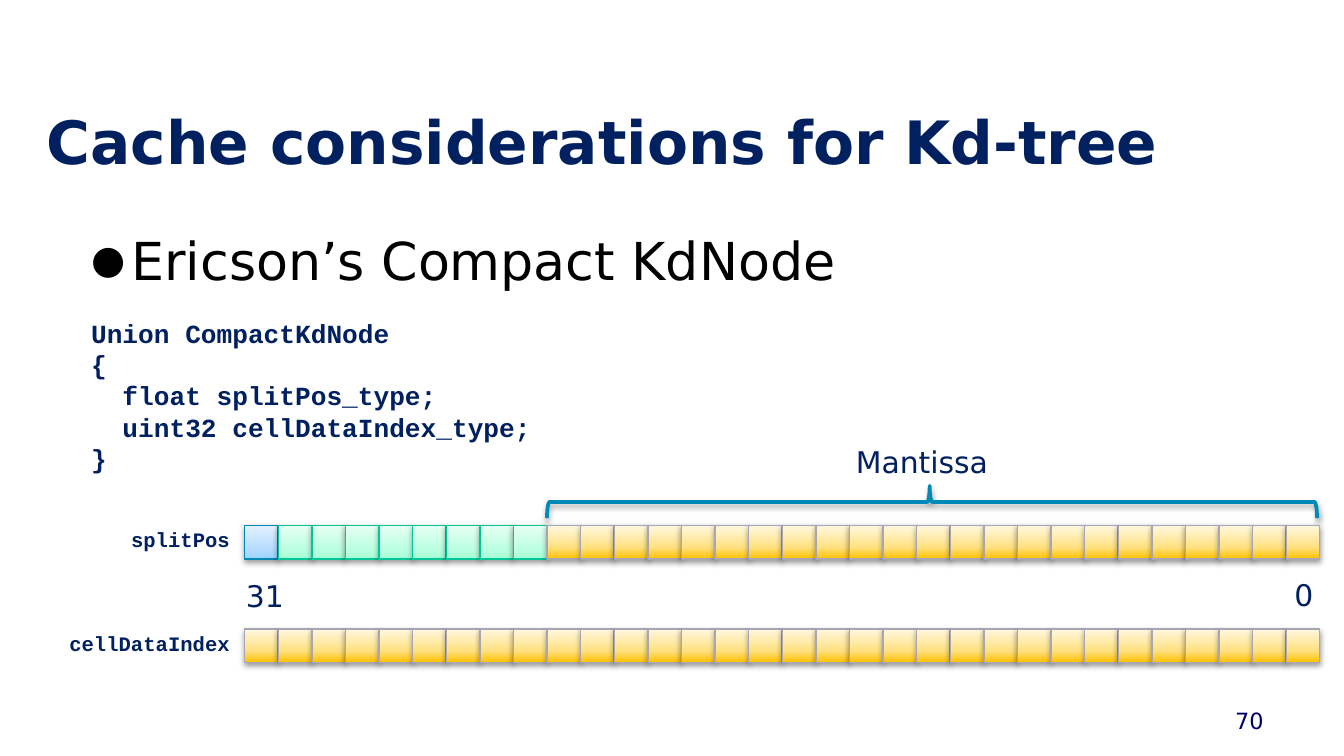
from copy import deepcopy
from dataclasses import dataclass
from typing import NamedTuple

from lxml.etree import SubElement
from pptx import Presentation
from pptx.dml.color import RGBColor
from pptx.enum.shapes import MSO_SHAPE as Preset
from pptx.enum.text import MSO_ANCHOR as Anchor, PP_ALIGN as Align
from pptx.oxml.ns import qn
from pptx.util import Inches, Pt

COLUMNS, ROWS, UNIT = 40, 22.5, 0.25


@dataclass(frozen=True)
class Theme:
    """Colours, fonts and type sizes of the slide."""
    sans: str = "DejaVu Sans"
    mono: str = "Courier New"
    navy: str = "002060"
    black: str = "000000"
    number: str = "000066"
    brace: str = "008AB9"
    title_size: int = 32
    body_size: int = 28
    note_size: int = 16
    code_size: int = 14
    number_size: int = 12
    label_size: int = 11
    sign: tuple = ("0087B5", "9DD2FF", "BADEFF", "E5F2FF")
    exponent: tuple = ("00C896", "A5FFD6", "BFFFE2", "E7FFF3")
    mantissa: tuple = ("A6A6B4", "FFC000", "FFE181", "FFF8E1")
    stops: tuple = (0, 0.35, 1)


THEME = Theme()


class Box(NamedTuple):
    """A region measured in grid columns and rows."""
    left: float
    top: float
    width: float
    height: float

    def area(self, column, row, width, height):
        """Return a region offset from this one's top left corner."""
        return Box(self.left + column, self.top + row, width, height)

    def frame(self):
        """Return left, top, width and height as slide lengths."""
        return [Inches(length * UNIT) for length in self]


def add_text(slide, box, text, *, size, font=THEME.sans, color=THEME.navy, bold=False,
             align=Align.LEFT, anchor=Anchor.TOP, wrap=True, bullet=None):
    """Add a text box with one paragraph for each line of text."""
    frame = slide.shapes.add_textbox(*box.frame()).text_frame
    frame.word_wrap, frame.vertical_anchor = wrap, anchor
    frame.text = text
    for paragraph in frame.paragraphs:
        if bullet:
            add_bullet(paragraph, bullet)
        paragraph.alignment = align
        style = paragraph.font
        style.name, style.size, style.bold = font, Pt(size), bold
        style.color.rgb = RGBColor.from_string(color)


def add_bullet(paragraph, character):
    """Give a paragraph a hanging bullet at three quarters of the text size."""
    properties = paragraph._p.get_or_add_pPr()
    properties.set("marL", str(Inches(0.3)))
    properties.set("indent", str(-Inches(0.3)))
    color = SubElement(properties, qn("a:buClr"))
    SubElement(color, qn("a:srgbClr"), val=THEME.black)
    SubElement(properties, qn("a:buSzPct"), val="75000")
    SubElement(properties, qn("a:buFont"), typeface=THEME.sans)
    SubElement(properties, qn("a:buChar"), char=character)


def add_shadow(shape):
    """Put a soft shadow just below a shape."""
    shape.shadow.inherit = False
    effects = shape._element.spPr.find(qn("a:effectLst"))
    shadow = SubElement(effects, qn("a:outerShdw"), blurRad=str(Pt(3.1)), dist=str(Pt(1.6)),
                        dir="5400000", rotWithShape="0")
    color = SubElement(shadow, qn("a:srgbClr"), val=THEME.black)
    SubElement(color, qn("a:alpha"), val="38000")


def add_bit(slide, box, palette):
    """Draw one bit cell, its gradient rising from the bottom."""
    outline, *shades = palette
    bit = slide.shapes.add_shape(Preset.RECTANGLE, *box.frame())
    fill = bit.fill
    fill.gradient()
    fill.gradient_angle = 90
    stop_list = bit._element.spPr.find(qn("a:gradFill")).find(qn("a:gsLst"))
    stop_list.append(deepcopy(stop_list[-1]))
    for stop, position, shade in zip(fill.gradient_stops, THEME.stops, shades):
        stop.position = position
        stop.color.rgb = RGBColor.from_string(shade)
    bit.line.color.rgb = RGBColor.from_string(outline)
    bit.line.width = Pt(0.75)
    add_shadow(bit)


def add_register(slide, box, label, label_width, fields):
    """Draw a labelled row of bits from fields of (count, palette)."""
    add_text(slide, box.area(-0.04 - label_width, -0.14, label_width, 1.16), label,
             size=THEME.label_size, font=THEME.mono, bold=True, align=Align.RIGHT)
    palettes = [palette for count, palette in fields for _ in range(count)]
    pitch = box.width / len(palettes)
    for index, palette in enumerate(palettes):
        add_bit(slide, box.area(index * pitch, 0, pitch, box.height), palette)


def add_brace(slide, box):
    """Draw a brace over the box, pointing up."""
    upright = box.area((box.width - box.height) / 2, (box.height - box.width) / 2,
                       box.height, box.width)
    brace = slide.shapes.add_shape(Preset.RIGHT_BRACE, *upright.frame())
    brace.rotation = 270
    brace.adjustments[0], brace.adjustments[1] = 0.083, 0.497
    brace.fill.background()
    brace.line.color.rgb = RGBColor.from_string(THEME.brace)
    brace.line.width = Pt(2)
    add_shadow(brace)


def add_bit_notes(slide, box):
    """Mark the mantissa and the end bits of the register in the box."""
    add_brace(slide, box.area(9, -1.18, 22.92, 0.96))
    notes = (("Mantissa", (17.76, -2.64, 4.76, 1.48)),
             ("31", (-0.4, 1.36, 1.96, 1.48)),
             ("0", (30.84, 1.32, 1.36, 1.48)))
    for note, place in notes:
        add_text(slide, box.area(*place), note, size=THEME.note_size,
                 align=Align.RIGHT, wrap=False)


def add_copy(slide, box):
    """Place title, bullet, code and slide number on the page."""
    add_text(slide, box.area(1, 2.92, 38, 3.4), "Cache considerations for Kd-tree",
             size=THEME.title_size, bold=True)
    add_text(slide, box.area(2.32, 6.6, 35.32, 12), "Ericson’s Compact KdNode",
             size=THEME.body_size, color=THEME.black, bullet="●")
    code = ("Union CompactKdNode", "{", "  float splitPos_type;",
            "  uint32 cellDataIndex_type;", "}")
    add_text(slide, box.area(2.32, 9.24, 16.68, 5.12), "\n".join(code),
             size=THEME.code_size, font=THEME.mono, bold=True)
    add_text(slide, box.area(28.68, 20.84, 9.32, 1.2), "70", size=THEME.number_size,
             color=THEME.number, align=Align.RIGHT, anchor=Anchor.MIDDLE)


def main():
    """Build and save the slide."""
    deck = Presentation()
    deck.slide_width, deck.slide_height = Inches(COLUMNS * UNIT), Inches(ROWS * UNIT)
    slide = deck.slides.add_slide(deck.slide_layouts[6])
    page = Box(0, 0, COLUMNS, ROWS)
    split_pos = page.area(7.28, 15.64, 32, 1)
    cell_index = split_pos.area(0, 3.08, 32, 1)
    add_copy(slide, page)
    add_bit_notes(slide, split_pos)
    add_register(slide, split_pos, "splitPos", 4.8,
                 ((1, THEME.sign), (8, THEME.exponent), (23, THEME.mantissa)))
    add_register(slide, cell_index, "cellDataIndex", 7.2, ((32, THEME.mantissa),))
    deck.save("out.pptx")


if __name__ == "__main__":
    main()
